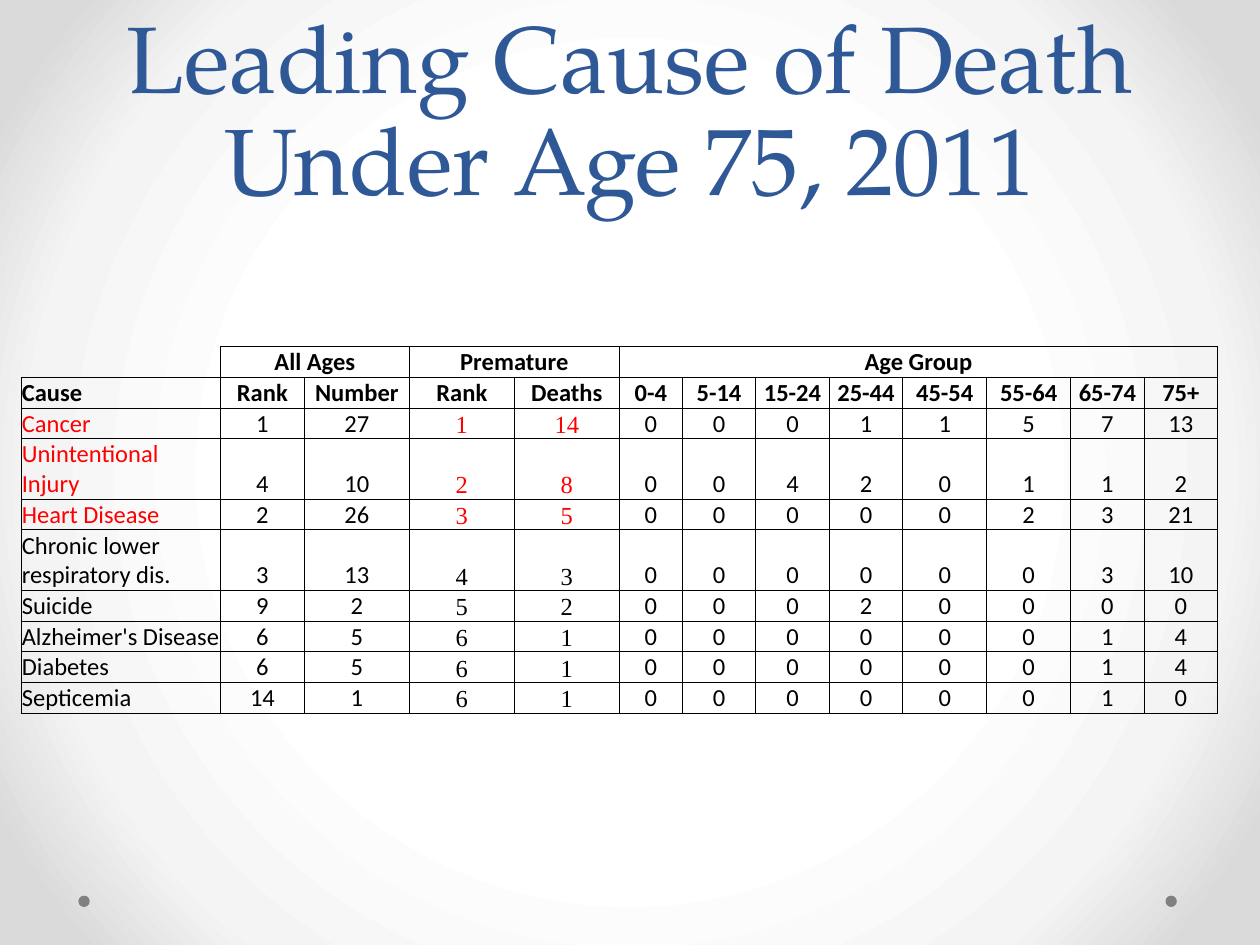
from pptx import Presentation
from pptx.dml.color import RGBColor
from pptx.enum.shapes import MSO_SHAPE
from pptx.enum.text import MSO_ANCHOR, MSO_AUTO_SIZE, PP_ALIGN
from pptx.oxml import parse_xml
from pptx.oxml.ns import nsdecls, qn
from pptx.util import Pt

COLORS = {
    "title": "2F5897", "text": "000000", "highlight": "FF0000",
    "dot": "808080", "border": "000000",
    "center": "FFFFFF", "middle": "F4F4F4", "edge": "DADADA",
}
GRADIENT = [(50, "center"), (76, "middle"), (92, "edge")]

COLUMN_WIDTHS = [114, 48, 60, 60, 60, 36, 42, 42, 42, 48, 48, 42, 42]
ROW_HEIGHT = 15
GROUPS = [("All Ages", 1, 2), ("Premature", 3, 4), ("Age Group", 5, 12)]
HEADINGS = ["Cause", "Rank", "Number", "Rank", "Deaths", "0-4", "5-14", "15-24",
            "25-44", "45-54", "55-64", "65-74", "75+"]
CAUSES = [
    ("Cancer", 1, 27, 1, 14, 0, 0, 0, 1, 1, 5, 7, 13),
    ("Unintentional Injury", 4, 10, 2, 8, 0, 0, 4, 2, 0, 1, 1, 2),
    ("Heart Disease", 2, 26, 3, 5, 0, 0, 0, 0, 0, 2, 3, 21),
    ("Chronic lower respiratory dis.", 3, 13, 4, 3, 0, 0, 0, 0, 0, 0, 3, 10),
    ("Suicide", 9, 2, 5, 2, 0, 0, 0, 2, 0, 0, 0, 0),
    ("Alzheimer's Disease", 6, 5, 6, 1, 0, 0, 0, 0, 0, 0, 1, 4),
    ("Diabetes", 6, 5, 6, 1, 0, 0, 0, 0, 0, 0, 1, 4),
    ("Septicemia", 14, 1, 6, 1, 0, 0, 0, 0, 0, 0, 1, 0),
]
HIGHLIGHTED_CAUSES = 3
PREMATURE_COLUMNS = (3, 4)


def color(name):
    return RGBColor.from_string(COLORS[name])


def format_para(para, font_name, size, color_name, bold=False, align=PP_ALIGN.CENTER):
    para.alignment = align
    for span in para.runs:
        span.font.name = font_name
        span.font.size = Pt(size)
        span.font.bold = bold
        span.font.color.rgb = color(color_name)


def paint_background(page):
    page.background.fill.solid()
    solid = page.background._cSld.find(".//" + qn("a:solidFill"))
    stops = "".join(
        f'<a:gs pos="{percent * 1000}"><a:srgbClr val="{COLORS[name]}"/></a:gs>'
        for percent, name in GRADIENT)
    gradient = parse_xml(
        f'<a:gradFill {nsdecls("a")} rotWithShape="1"><a:gsLst>{stops}</a:gsLst>'
        '<a:path path="circle"><a:fillToRect l="50000" t="50000" r="50000" b="50000"/>'
        '</a:path></a:gradFill>')
    solid.getparent().replace(solid, gradient)


def add_dots(page, left, top, width, size):
    for dot_left in (left, left + width - size):
        dot = page.shapes.add_shape(MSO_SHAPE.OVAL, Pt(dot_left), Pt(top), Pt(size), Pt(size))
        dot.shadow.inherit = False
        dot.fill.solid()
        dot.fill.fore_color.rgb = color("dot")
        dot.line.fill.background()


def place_title(page, left, top, width, height):
    title = page.shapes.title
    title.left, title.top, title.width, title.height = Pt(left), Pt(top), Pt(width), Pt(height)
    frame = title.text_frame
    frame.text = "Leading Cause of Death Under Age 75, 2011"
    frame.word_wrap = True
    frame.auto_size = MSO_AUTO_SIZE.NONE
    frame.vertical_anchor = MSO_ANCHOR.BOTTOM
    para = frame.paragraphs[0]
    para.line_spacing = Pt(58)
    format_para(para, "TeX Gyre Pagella", 54, "title")


def set_borders(cell, hidden=()):
    properties = cell._tc.get_or_add_tcPr()
    for index, side in enumerate(("lnL", "lnR", "lnT", "lnB")):
        paint = "<a:noFill/>" if side in hidden else (
            f'<a:solidFill><a:srgbClr val="{COLORS["border"]}"/></a:solidFill>')
        properties.insert(index, parse_xml(
            f'<a:{side} {nsdecls("a")} w="{Pt(0.5)}">{paint}</a:{side}>'))


def format_cell(cell, row, column):
    cell.fill.background()
    cell.vertical_anchor = MSO_ANCHOR.BOTTOM
    cell.margin_left = cell.margin_right = cell.margin_top = Pt(0.5)
    cell.margin_bottom = Pt(0)
    set_borders(cell, ("lnL", "lnT") if row == column == 0 else ())
    premature = row >= 2 and column in PREMATURE_COLUMNS
    highlighted = 2 <= row < 2 + HIGHLIGHTED_CAUSES and (premature or column == 0)
    format_para(
        cell.text_frame.paragraphs[0],
        "Times New Roman" if premature else "Calibri", 14,
        "highlight" if highlighted else "text",
        bold=row < 2,
        align=PP_ALIGN.LEFT if column == 0 else PP_ALIGN.CENTER)


def add_cause_table(page, left, top):
    rows = [HEADINGS, *CAUSES]
    row_count = len(rows) + 1
    table = page.shapes.add_table(
        row_count, len(COLUMN_WIDTHS), Pt(left), Pt(top),
        Pt(sum(COLUMN_WIDTHS)), Pt(row_count * ROW_HEIGHT)).table
    table.first_row = table.horz_banding = False
    for column, width in zip(table.columns, COLUMN_WIDTHS):
        column.width = Pt(width)
    for table_row in table.rows:
        table_row.height = Pt(ROW_HEIGHT)

    # Group headings span several columns
    for label, first, last in GROUPS:
        table.cell(0, first).merge(table.cell(0, last))
        table.cell(0, first).text_frame.text = label

    # Column headings and figures
    for row, values in enumerate(rows, start=1):
        for column, value in enumerate(values):
            table.cell(row, column).text_frame.text = str(value)

    for row in range(row_count):
        for column in range(len(COLUMN_WIDTHS)):
            format_cell(table.cell(row, column), row, column)
    # The empty corner must not stretch the first row
    corner = table.cell(0, 0).text_frame.paragraphs[0]
    corner.font.size = Pt(14)


def main():
    deck = Presentation()
    deck.slide_width, deck.slide_height = Pt(720), Pt(540)
    page = deck.slides.add_slide(deck.slide_layouts[5])
    paint_background(page)
    add_dots(page, left=44.8, top=511.8, width=627.7, size=6.5)
    place_title(page, left=36, top=0, width=648, height=126)
    add_cause_table(page, left=12, top=198)
    deck.save("out.pptx")


if __name__ == "__main__":
    main()
